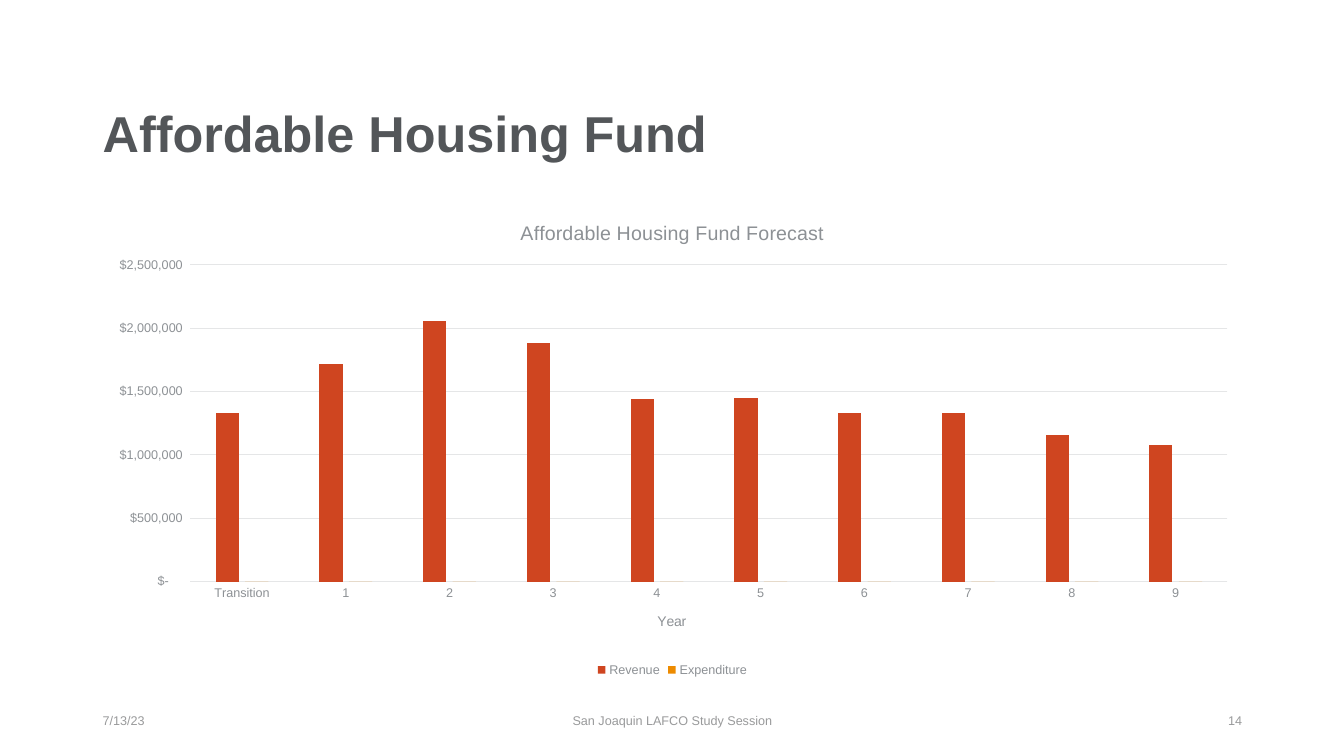
from lxml.etree import SubElement
from pptx import Presentation
from pptx.chart.data import CategoryChartData
from pptx.dml.color import RGBColor
from pptx.enum.chart import XL_CHART_TYPE, XL_LEGEND_POSITION, XL_TICK_MARK
from pptx.enum.text import MSO_ANCHOR, PP_ALIGN
from pptx.oxml.ns import qn
from pptx.util import Cm, Pt

COLORS = {"title": "535659", "label": "8D9195", "grid": "E5E6E7",
          "foot": "999A9B", "revenue": "CF4520", "expense": "ED8B00"}
MONEY = '_("$"* #,##0_);_("$"* \\(#,##0\\);_("$"* "-"??_);_(@_)'
LEFT, WIDTH = 2.34, 29.21


class Deck:
    """Holds the style and the current slide, and draws its elements."""

    def __init__(self):
        self.face = "Arial"
        self.prs = Presentation()
        self.prs.slide_width, self.prs.slide_height = Cm(33.87), Cm(19.05)
        self.slide = self.prs.slides.add_slide(self.prs.slide_layouts[6])

    def style(self, font, size, color, bold=False):
        font.name, font.size, font.bold = self.face, Pt(size), bold
        font.color.rgb = RGBColor.from_string(COLORS[color])

    def text(self, words, box, size, color, align=PP_ALIGN.LEFT, bold=False, space=1.0):
        frame = self.slide.shapes.add_textbox(*map(Cm, box)).text_frame
        frame.word_wrap = True
        frame.vertical_anchor = MSO_ANCHOR.MIDDLE
        para = frame.paragraphs[0]
        para.text, para.alignment, para.line_spacing = words, align, space
        self.style(para.font, size, color, bold)

    def label(self, frame, words, size):
        frame.text = words
        self.style(frame.paragraphs[0].font, size, "label")

    def line(self, form):
        form.line.color.rgb = RGBColor.from_string(COLORS["grid"])
        form.line.width = Pt(0.75)

    def axis(self, axis):
        axis.major_tick_mark = axis.minor_tick_mark = XL_TICK_MARK.NONE
        self.style(axis.tick_labels.font, 9, "label")

    def place(self, chart, **area):
        plot = chart.plots[0]._element.getparent()
        layout = plot.find(qn("c:layout"))
        if layout is None:
            layout = SubElement(plot, qn("c:layout"))
            plot.insert(0, layout)
        manual = SubElement(layout, qn("c:manualLayout"))
        modes = {"layoutTarget": "inner", "xMode": "edge", "yMode": "edge"}
        for name, value in {**modes, **area}.items():
            SubElement(manual, qn("c:" + name)).set("val", str(value))

    def chart(self, title, cats, series, box):
        data = CategoryChartData(number_format=MONEY)
        data.categories = cats
        for name, values, _ in series:
            data.add_series(name, values)
        kind = XL_CHART_TYPE.COLUMN_CLUSTERED
        chart = self.slide.shapes.add_chart(kind, *map(Cm, box), data).chart
        self.style(chart.font, 10, "title")
        self.label(chart.chart_title.text_frame, title, 14)
        chart.chart_title.include_in_layout = False
        chart.has_legend = True
        chart.legend.position = XL_LEGEND_POSITION.BOTTOM
        chart.legend.include_in_layout = False
        self.style(chart.legend.font, 9, "label")

        plot = chart.plots[0]
        plot.gap_width, plot.overlap, plot.vary_by_categories = 219, -27, False
        for bars, (_, _, color) in zip(plot.series, series):
            bars.format.fill.solid()
            bars.format.fill.fore_color.rgb = RGBColor.from_string(COLORS[color])

        years, money = chart.category_axis, chart.value_axis
        self.axis(years)
        self.line(years.format)
        self.label(years.axis_title.text_frame, "Year", 10)
        self.axis(money)
        money.format.line.fill.background()
        self.line(money.major_gridlines.format)
        money.minimum_scale, money.maximum_scale, money.major_unit = 0, 2500000, 500000
        money.tick_labels.number_format = MONEY
        money.tick_labels.number_format_is_linked = False
        self.place(chart, x=0.084, y=0.132, w=0.895, h=0.66)


def main():
    deck = Deck()
    deck.text("Affordable Housing Fund", (LEFT, 2.18, WIDTH, 2.51), 36, "title",
              bold=True, space=0.9)
    funds = [1330000, 1720000, 2060000, 1880000, 1440000,
             1450000, 1330000, 1330000, 1160000, 1080000]
    cats = ["Transition"] + [str(year) for year in range(1, 10)]
    deck.chart("Affordable Housing Fund Forecast", cats,
               [("Revenue", funds, "revenue"),
                ("Expenditure", [0] * len(funds), "expense")],
               (LEFT, 5.08, WIDTH, 12.09))
    feet = [("7/13/23", 7.62, 0, PP_ALIGN.LEFT),
            ("San Joaquin LAFCO Study Session", 11.43, 0.5, PP_ALIGN.CENTER),
            ("14", 7.62, 1, PP_ALIGN.RIGHT)]
    for words, wide, part, align in feet:
        deck.text(words, (LEFT + (WIDTH - wide) * part, 17.65, wide, 1.02), 9,
                  "foot", align)
    deck.prs.save("out.pptx")


if __name__ == "__main__":
    main()
